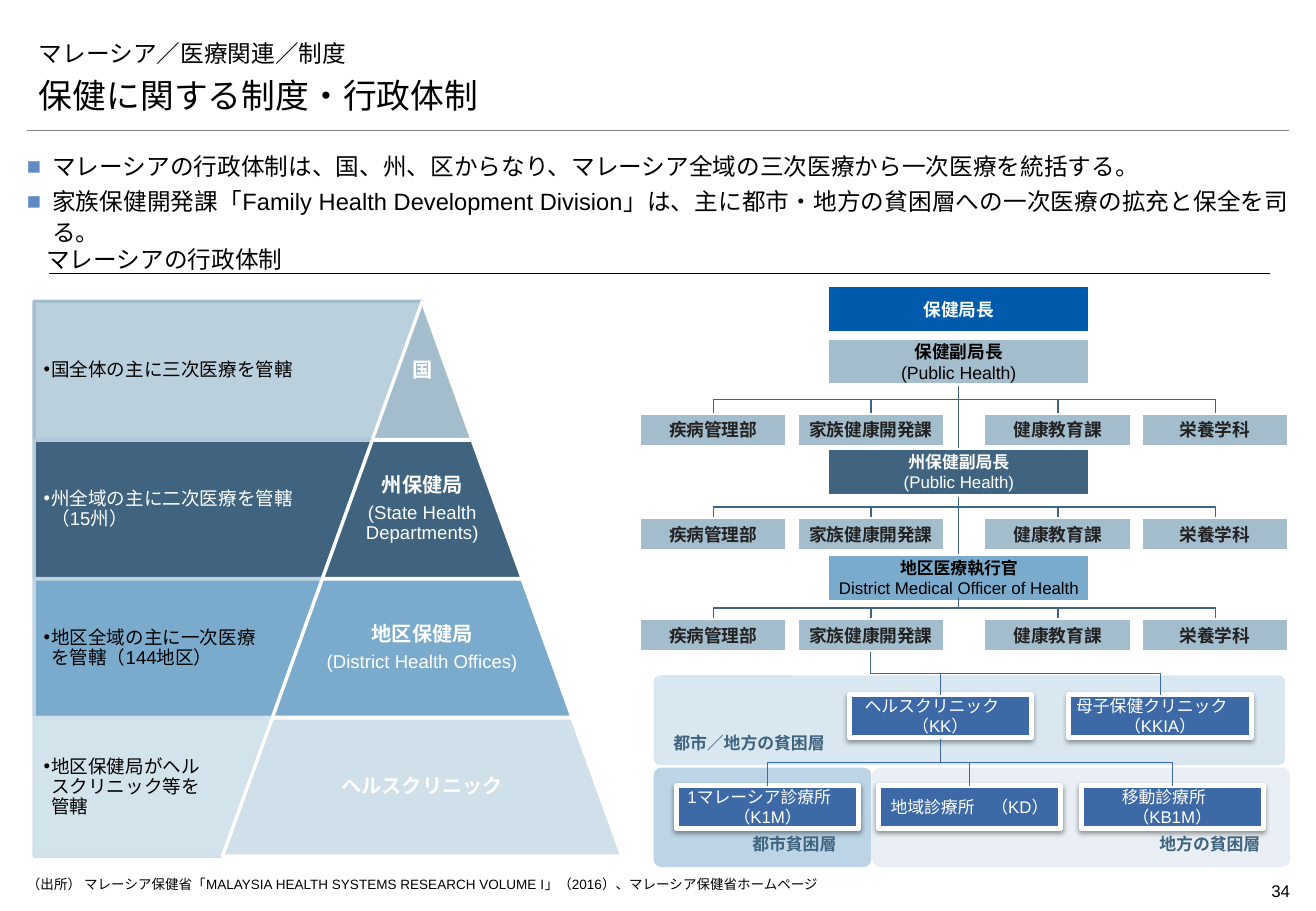
import dataclasses

import pptx
import pptx.dml.color
import pptx.enum.shapes
import pptx.enum.text
import pptx.oxml
import pptx.oxml.ns
import pptx.util

Pt = pptx.util.Pt
SHAPES = pptx.enum.shapes.MSO_SHAPE
CONNECTORS = pptx.enum.shapes.MSO_CONNECTOR
ALIGN = pptx.enum.text.PP_ALIGN
ANCHOR = pptx.enum.text.MSO_ANCHOR


@dataclasses.dataclass(frozen=True)
class Theme:
    black: str = "000000"
    white: str = "FFFFFF"
    dark_grey: str = "222222"
    rule_grey: str = "7F7F7F"
    bullet: str = "5F8AC3"
    director: str = "005BAC"
    national: str = "A4BDCD"
    state: str = "40647F"
    district: str = "7AABCC"
    local: str = "CFE0EB"
    clinic: str = "3D6AA7"
    national_panel: str = "B4CBDA"
    panel_edges: tuple = ("A4BECD", "B2CAD8", "C0D5E2", "D0E1EC")
    all_poor: str = "B5D1E2"
    rural_poor: str = "D5E1EA"
    font: str = "Arial"
    heading_font: str = "Montserrat"
    east_asian_font: str = "Noto Sans CJK JP"
    title: float = 20
    body: float = 14
    level: float = 12
    detail: float = 11
    division: float = 10.5
    label: float = 10
    source: float = 8


def add_xml(parent, tag, content="", **attributes):
    """Append one DrawingML element, with optional inner XML."""
    listed = "".join(f' {name}="{value}"' for name, value in attributes.items())
    namespace = pptx.oxml.ns.nsdecls("a")
    parent.append(pptx.oxml.parse_xml(f"<a:{tag} {namespace}{listed}>{content}</a:{tag}>"))


class Sheet:
    def __init__(self, slide, theme):
        self.slide = slide
        self.theme = theme

    def fill_text(self, shape, lines, size, color, bold=False, font=None, align=ALIGN.LEFT,
                  anchor=ANCHOR.MIDDLE, insets=(0, 0, 0, 0), spacing=None, after=0, bullet=None):
        """Fill a shape with paragraphs; a line is a text or (text, size, bold)."""
        frame = shape.text_frame
        frame.word_wrap = True
        frame.vertical_anchor = anchor
        frame.margin_left, frame.margin_top, frame.margin_right, frame.margin_bottom = map(Pt, insets)
        for index, line in enumerate(lines):
            text, line_size, line_bold = (line, size, bold) if isinstance(line, str) else line
            paragraph = frame.add_paragraph() if index else frame.paragraphs[0]
            paragraph.text = text
            if bullet:
                character, bullet_color, indent = bullet
                properties = paragraph._p.get_or_add_pPr()
                properties.set("marL", str(Pt(indent)))
                properties.set("indent", str(-Pt(indent)))
                add_xml(properties, "buClr", f'<a:srgbClr val="{bullet_color}"/>')
                add_xml(properties, "buFont", typeface=self.theme.font)
                add_xml(properties, "buChar", char=character)
            paragraph.alignment = align
            paragraph.line_spacing = spacing
            paragraph.space_after = Pt(after)
            for run in paragraph.runs:
                run.font.name = font or self.theme.font
                run.font.size = Pt(line_size)
                run.font.bold = line_bold
                run.font.color.rgb = pptx.dml.color.RGBColor.from_string(color)
                add_xml(run._r.get_or_add_rPr(), "ea", typeface=self.theme.east_asian_font)

    def text(self, box, lines, size, color, **style):
        shape = self.slide.shapes.add_textbox(*map(Pt, box))
        self.fill_text(shape, lines, size, color, **style)

    def shape(self, kind, box, fill, line=None, width=0.0, opacity=100, adjustments=(), rotation=0):
        shape = self.slide.shapes.add_shape(kind, *map(Pt, box))
        shape.shadow.inherit = False
        shape.rotation = rotation
        for index, value in enumerate(adjustments):
            shape.adjustments[index] = value
        shape.fill.solid()
        shape.fill.fore_color.rgb = pptx.dml.color.RGBColor.from_string(fill)
        if opacity < 100:
            color = shape._element.spPr.find(".//" + pptx.oxml.ns.qn("a:srgbClr"))
            add_xml(color, "alpha", val=opacity * 1000)
        if line:
            shape.line.color.rgb = pptx.dml.color.RGBColor.from_string(line)
            shape.line.width = Pt(width)
        else:
            shape.line.fill.background()
        return shape

    def box(self, box, lines, fill, size, color, bold=True, outline=2.25):
        shape = self.shape(SHAPES.RECTANGLE, box, fill, self.theme.white, outline)
        self.fill_text(shape, lines, size, color, bold, align=ALIGN.CENTER, insets=(3, 3, 3, 3))
        return shape

    def clinic(self, left, top, text):
        shape = self.box((left, top, 108, 25.2), [text], self.theme.clinic,
                         self.theme.label, self.theme.white, bold=False, outline=3)
        effects = shape._element.spPr.find(pptx.oxml.ns.qn("a:effectLst"))
        shadow = f'<a:srgbClr val="{self.theme.black}"><a:alpha val="38000"/></a:srgbClr>'
        add_xml(effects, "outerShdw", shadow,
                blurRad=Pt(3.1), dist=Pt(1.6), dir=5400000, rotWithShape=0)

    def line(self, start, end, color, width=0.75, kind=CONNECTORS.STRAIGHT):
        connector = self.slide.shapes.add_connector(kind, *map(Pt, (*start, *end)))
        connector.line.color.rgb = pptx.dml.color.RGBColor.from_string(color)
        connector.line.width = Pt(width)
        add_xml(connector._element.spPr, "effectLst")
        return connector

    def branches(self, root, targets, bottom, color):
        """Join a root point to points below by elbows that leave it downwards."""
        x, top = root
        half_drop, middle = (bottom - top) / 2, (top + bottom) / 2
        for target in targets:
            center, half_span = (x + target) / 2, abs(target - x) / 2
            side = 1 if target < x else -1
            connector = self.line((center - side * half_drop, middle - half_span),
                                  (center + side * half_drop, middle + half_span),
                                  color, kind=CONNECTORS.ELBOW)
            transform = connector._element.spPr.find(pptx.oxml.ns.qn("a:xfrm"))
            transform.set("rot", "5400000" if side == 1 else "16200000")


def draw_heading(sheet, theme):
    sheet.line((16, 77), (764, 77), theme.rule_grey, 0.25)
    sheet.text((708, 518.4, 56.6, 19.4), ["34"], theme.label, theme.black, align=ALIGN.RIGHT)
    for top, height, text, size, font in [
        (19, 25, "マレーシア／医療関連／制度", theme.body, theme.east_asian_font),
        (40.3, 32, "保健に関する制度・行政体制", theme.title, theme.heading_font),
    ]:
        sheet.text((16, top, 748, height), [text], size, theme.black, font=font,
                   insets=(7.2, 0, 7.2, 0))
    sheet.text((16, 88.6, 748, 40), [
        "マレーシアの行政体制は、国、州、区からなり、マレーシア全域の三次医療から一次医療を統括する。",
        "家族保健開発課「Family Health Development Division」は、主に都市・地方の貧困層への一次医療の拡充と保全を司る。",
    ], theme.body, theme.black, align=ALIGN.JUSTIFY, anchor=ANCHOR.TOP, spacing=1.1, after=2,
        bullet=("■", theme.bullet, 15))
    sheet.line((28.8, 162), (753, 162), theme.black)
    sheet.text((27.4, 145.4, 726, 22.4), ["マレーシアの行政体制"], theme.body, theme.black,
               font=theme.heading_font, anchor=ANCHOR.BOTTOM, insets=(0, 3.6, 0, 5.8))
    sheet.text((16, 519, 672, 12), [
        "（出所） マレーシア保健省「MALAYSIA HEALTH SYSTEMS RESEARCH VOLUME I」（2016）、マレーシア保健省ホームページ",
    ], theme.source, theme.black, anchor=ANCHOR.TOP)


def draw_pyramid(sheet, theme):
    left, top, apex, height, pitch, step = 20.2, 178.6, 250.3, 82, 82.3, 29.6
    levels = [
        ("国全体の主に三次医療を管轄", theme.black, theme.national_panel, 90,
         theme.national, "国", None),
        ("州全域の主に二次医療を管轄　（15州）", theme.white, theme.state, 100,
         theme.state, "州保健局", "(State Health Departments)"),
        ("地区全域の主に一次医療を管轄（144地区）", theme.black, theme.district, 100,
         theme.district, "地区保健局", "(District Health Offices)"),
        ("地区保健局がヘルスクリニック等を管轄", theme.black, theme.local, 90,
         theme.local, "ヘルスクリニック", None),
    ]
    for index, (duty, duty_color, panel, opacity, fill, name, english) in enumerate(levels):
        y, half = top + index * pitch, step * (index + 1)
        start, width = apex - half, 2 * half
        sheet.shape(SHAPES.NON_ISOSCELES_TRAPEZOID, (left, y, start + step - left, height), panel,
                    theme.panel_edges[index], 2, opacity, (step / height, 0), 180)
        sheet.text((left, y, start - left, height), [duty], theme.detail, duty_color,
                   insets=(5.6, 5.6, 5.6, 5.6), spacing=0.9, bullet=("•", duty_color, 4.5))
        sheet.shape(SHAPES.TRAPEZOID, (start, y, width, height), fill, theme.white, 2,
                    adjustments=(step / min(width, height),))
        names = [name] + ([(english, theme.detail, False)] if english else [])
        sheet.text((apex - 0.325 * width, y, 0.65 * width, height), names, theme.level, theme.white,
                   bold=True, align=ALIGN.CENTER, spacing=0.9, after=4)


def draw_organisation(sheet, theme):
    trunk = 568.3
    for top, lines, fill, size, color in [
        (169.2, ["保健局長"], theme.director, theme.division, theme.white),
        (200.2, ["保健副局長", ("(Public Health)", theme.division, False)],
         theme.national, theme.division, theme.black),
        (265.7, ["州保健副局長", ("(Public Health)", theme.label, False)],
         theme.state, theme.label, theme.white),
        (328.3, ["地区医療執行官", ("District Medical Officer of Health", theme.label, False)],
         theme.district, theme.label, theme.black),
    ]:
        sheet.box((490.3, top, 156, 28.2), lines, fill, size, color)

    divisions = {"疾病管理部": 378.7, "家族健康開発課": 472.3, "健康教育課": 583, "栄養学科": 676.2}
    centers = [left + 44 for left in divisions.values()]
    for root, top in [(229, 244.8), (294.4, 306.7), (354.4, 366.5)]:
        for name, left in divisions.items():
            sheet.box((left, top, 88, 20), [name], theme.national, theme.division, theme.dark_grey)
        sheet.branches((trunk, root), centers, top, theme.state)
    for start, end in [(229, 265.7), (294.4, 328.3)]:
        sheet.line((trunk, start), (trunk, end), theme.state)


def draw_clinics(sheet, theme):
    for box, fill in [((387.4, 400.3, 374.4, 53.3), theme.all_poor),
                      ((387.4, 455, 129, 59), theme.district),
                      ((517, 455, 247.7, 59), theme.rural_poor)]:
        sheet.shape(SHAPES.ROUNDED_RECTANGLE, box, fill, opacity=50, adjustments=(0.077,))
    upper, lower = 411.8, 465.8
    for left, top, name in [(503.3, upper, "ヘルスクリニック　（KK）"),
                            (633.6, upper, "母子保健クリニック　（KKIA）"),
                            (401, lower, "1マレーシア診療所　（K1M）"),
                            (520.6, lower, "地域診療所　（KD）"),
                            (640.8, lower, "移動診療所　（KB1M）")]:
        sheet.clinic(left, top, name)
    for left, top, width, text in [(424, 490.3, 93.6, "都市貧困層"),
                                   (670.3, 490.3, 93.6, "地方の貧困層"),
                                   (378.7, 430.6, 130.3, "都市／地方の貧困層")]:
        sheet.text((left, top, width, 19.4), [text], theme.label, theme.state, bold=True,
                   align=ALIGN.CENTER)
    sheet.branches((515.8, 386.6), [557.3, 687.6], upper, theme.clinic)
    sheet.branches((557.3, 437.8), [455, 574.6, 694.8], lower, theme.clinic)


def main():
    presentation = pptx.Presentation()
    presentation.slide_width, presentation.slide_height = Pt(780), Pt(540)
    theme = Theme()
    sheet = Sheet(presentation.slides.add_slide(presentation.slide_layouts[6]), theme)
    draw_heading(sheet, theme)
    draw_pyramid(sheet, theme)
    draw_organisation(sheet, theme)
    draw_clinics(sheet, theme)
    presentation.save("out.pptx")


if __name__ == "__main__":
    main()
